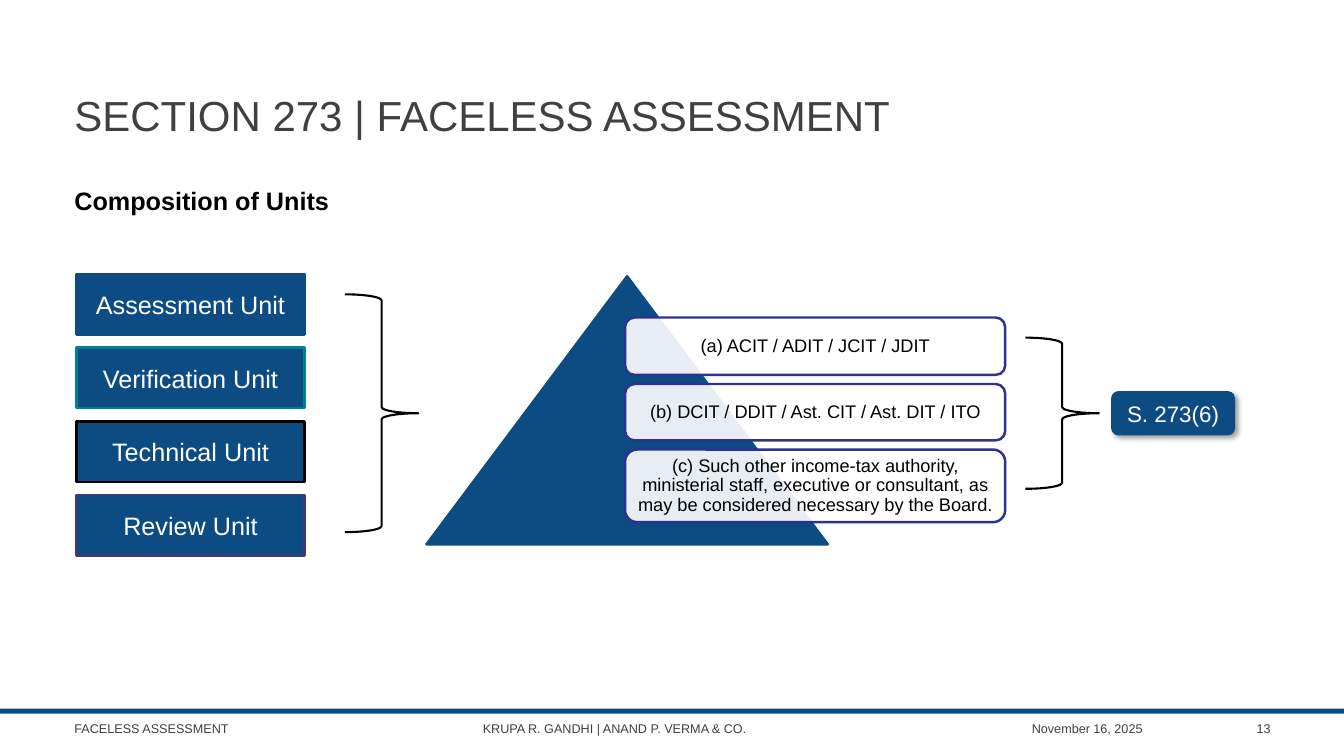
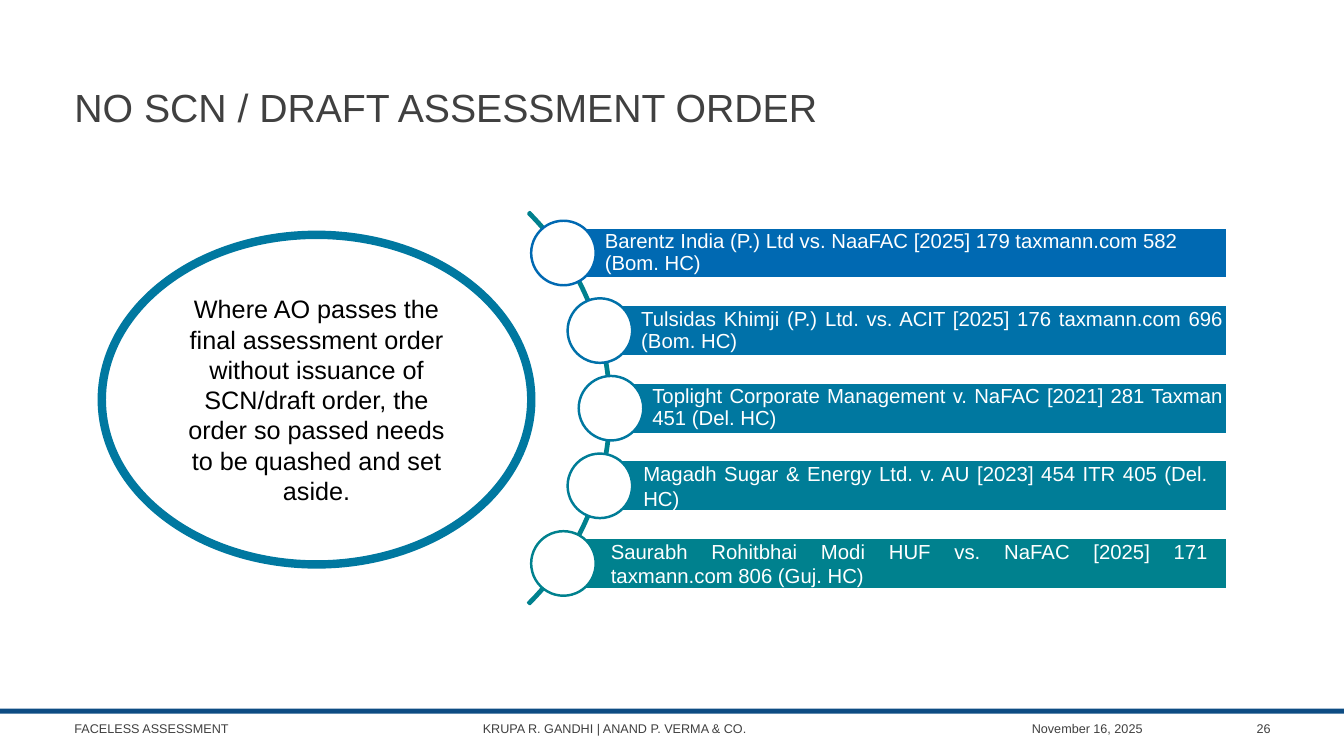
from math import sqrt

from lxml.etree import SubElement
from pptx import Presentation
from pptx.dml.color import RGBColor
from pptx.enum.shapes import MSO_SHAPE
from pptx.enum.text import MSO_ANCHOR, PP_ALIGN
from pptx.oxml.ns import qn
from pptx.util import Inches, Pt

NAVY, GREY, BLACK, WHITE, TEAL = "0D4C83", "404040", "000000", "FFFFFF", "00818E"
MARGIN = 0.64
BAND_TOP = 7.03


def color(hex_string):
    return RGBColor.from_string(hex_string)


class Deck:
    """Holds the shared style and the slide being built."""

    font = "Arial"

    def __init__(self):
        self.prs = Presentation()
        self.prs.slide_width, self.prs.slide_height = Inches(13.33), Inches(7.5)
        self.slide = None

    def label(self, item, text, size, ink, align=PP_ALIGN.LEFT, anchor=MSO_ANCHOR.MIDDLE,
              bold=False, spacing=1.0, insets=(0.1, 0.05, 0.1, 0.05)):
        frame = item.text_frame
        frame_format = {"word_wrap": True, "vertical_anchor": anchor}
        for side, inset in zip(("left", "top", "right", "bottom"), insets):
            frame_format["margin_" + side] = Inches(inset)
        paragraph = frame.paragraphs[0]
        paragraph.text = text
        formats = (
            (frame, frame_format),
            (paragraph, {"alignment": align, "line_spacing": spacing}),
            (paragraph.runs[0].font, {"name": self.font, "size": Pt(size), "bold": bold}),
        )
        for target, values in formats:
            for attribute, value in values.items():
                setattr(target, attribute, value)
        paragraph.runs[0].font.color.rgb = color(ink)

    def text(self, box, text, size, ink, **style):
        item = self.slide.shapes.add_textbox(*map(Inches, box))
        self.label(item, text, size, ink, **style)

    def shape(self, kind, box, fill=None, line=None, width=1.75, opacity=None):
        item = self.slide.shapes.add_shape(kind, *map(Inches, box))
        item.shadow.inherit = False
        if fill:
            item.fill.solid()
            item.fill.fore_color.rgb = color(fill)
        else:
            item.fill.background()
        if line:
            item.line.color.rgb = color(line)
            item.line.width = Pt(width)
        else:
            item.line.fill.background()
        if opacity:
            tint = item.element.spPr.find(qn("a:solidFill"))[0]
            SubElement(tint, qn("a:alpha"), val=str(opacity * 1000))
        return item

    def drop_shadow(self, item):
        effects = item.element.spPr.find(qn("a:effectLst"))
        shadow = SubElement(effects, qn("a:outerShdw"), blurRad=str(Pt(4)),
                            dist=str(Pt(3)), dir=str(45 * 60000), algn="tl", rotWithShape="0")
        tint = SubElement(shadow, qn("a:srgbClr"), val=BLACK)
        SubElement(tint, qn("a:alpha"), val="40000")

    def brace(self, box):
        self.shape(MSO_SHAPE.RIGHT_BRACE, box, line=BLACK, width=1.5)

    def new_slide(self, title, number, title_top, title_size):
        self.slide = self.prs.slides.add_slide(self.prs.slide_layouts[6])
        self.shape(MSO_SHAPE.RECTANGLE, (0, BAND_TOP, 13.33, 0.05), NAVY)
        footers = (
            (MARGIN, 3, "FACELESS ASSESSMENT", PP_ALIGN.LEFT),
            (4.69, 3.51, "KRUPA R. GANDHI | ANAND P. VERMA & CO.", PP_ALIGN.LEFT),
            (8.32, 3.11, "November 16, 2025", PP_ALIGN.RIGHT),
            (11.55, 1.15, number, PP_ALIGN.RIGHT),
        )
        for left, width, footer, align in footers:
            self.text((left, BAND_TOP, width, 0.4), footer, 9, GREY, align=align)
        self.text((MARGIN, title_top, 12.06, 1.08), title, title_size, GREY)


def build_units(deck):
    deck.new_slide("SECTION 273 | FACELESS ASSESSMENT", "13", 0.6, 30)
    deck.text((MARGIN, 1.79, 2.87, 0.4), "Composition of Units", 18, BLACK,
              bold=True, anchor=MSO_ANCHOR.TOP)

    # Units
    units = (("Assessment Unit", NAVY), ("Verification Unit", TEAL),
             ("Technical Unit", BLACK), ("Review Unit", "3B3B77"))
    for row, (name, outline) in enumerate(units):
        unit = deck.shape(MSO_SHAPE.RECTANGLE, (0.76, 2.72 + row * 0.73, 2.26, 0.6), NAVY, outline)
        deck.label(unit, name, 18, WHITE, align=PP_ALIGN.CENTER)
    deck.brace((3.42, 2.92, 0.73, 2.36))

    # Pyramid of authorities
    deck.shape(MSO_SHAPE.ISOSCELES_TRIANGLE, (4.23, 2.74, 3.98, 2.66), NAVY, NAVY)
    authorities = (
        ("(a) ACIT / ADIT / JCIT / JDIT", 0.57),
        ("(b) DCIT / DDIT / Ast. CIT / Ast. DIT / ITO", 0.56),
        ("(c) Such other income-tax authority, ministerial staff, executive or consultant, "
         "as may be considered necessary by the Board.", 0.72),
    )
    top = 3.15
    for authority, height in authorities:
        card = deck.shape(MSO_SHAPE.ROUNDED_RECTANGLE, (6.2, top, 3.77, height),
                          WHITE, "2D3190", opacity=90)
        deck.label(card, authority, 13, BLACK, align=PP_ALIGN.CENTER, spacing=0.9,
                   insets=(0.05,) * 4)
        top += height + 0.09

    # Governing section
    deck.brace((10.17, 3.35, 0.73, 1.5))
    section = deck.shape(MSO_SHAPE.ROUNDED_RECTANGLE, (11.02, 3.88, 1.23, 0.44), NAVY)
    deck.drop_shadow(section)
    deck.label(section, "S. 273(6)", 16, WHITE, align=PP_ALIGN.CENTER)


def build_rulings(deck):
    deck.new_slide("NO SCN / DRAFT ASSESSMENT ORDER", "26", 0.52, 28)

    # Arc on which the rulings sit
    center_x, center_y, radius = 3.31, 4.05, 2.75
    arc = deck.shape(MSO_SHAPE.BLOCK_ARC,
                     (center_x - radius, center_y - radius, 2 * radius, 2 * radius), line=TEAL)
    for index, value in enumerate((189, 27, 0.004)):
        arc.adjustments[index] = value

    # Rulings: text, colour, alignment, line spacing, left and right inset
    left, justify = PP_ALIGN.LEFT, PP_ALIGN.JUSTIFY
    rulings = (
        ("Barentz India (P.) Ltd vs. NaaFAC [2025] 179 taxmann.com 582 (Bom. HC)",
         "0069B2", left, 0.9, 0.41, 0.04),
        ("Tulsidas Khimji (P.) Ltd. vs. ACIT [2025] 176 taxmann.com 696 (Bom. HC)",
         "0071A9", justify, 0.9, 0.41, 0.04),
        ("Toplight Corporate Management v. NaFAC [2021] 281 Taxman 451 (Del. HC)",
         "0078A0", justify, 0.9, 0.41, 0.04),
        ("Magadh Sugar & Energy Ltd. v. AU [2023] 454 ITR 405 (Del. HC)",
         "007D97", justify, 1.0, 0.43, 0.19),
        ("Saurabh Rohitbhai Modi HUF vs. NaFAC [2025] 171 taxmann.com 806 (Guj. HC)",
         TEAL, justify, 1.0, 0.47, 0.19),
    )
    bar_right, bar_height, dot = 12.17, 0.51, 0.64
    for row, (citation, tint, align, spacing, indent, right) in enumerate(rulings):
        offset = (row - 2) * 0.77
        x, y = center_x + sqrt(radius ** 2 - offset ** 2), center_y + offset
        bar = deck.shape(MSO_SHAPE.RECTANGLE,
                         (x, y - bar_height / 2, bar_right - x, bar_height), tint, WHITE)
        deck.label(bar, citation, 14.5, WHITE, align=align, spacing=spacing,
                   insets=(indent, 0.04, right, 0.04))
        deck.shape(MSO_SHAPE.OVAL, (x - dot / 2, y - dot / 2, dot, dot), WHITE, tint)

    # Principle
    principle = deck.shape(MSO_SHAPE.OVAL, (1.01, 2.33, 4.26, 3.27), WHITE, "0078A0", 6)
    deck.label(principle, "Where AO passes the final assessment order without issuance of "
               "SCN/draft order, the order so passed needs to be quashed and set aside.",
               18, BLACK, align=PP_ALIGN.CENTER)


def main():
    deck = Deck()
    build_units(deck)
    build_rulings(deck)
    deck.prs.save("out.pptx")


if __name__ == "__main__":
    main()
